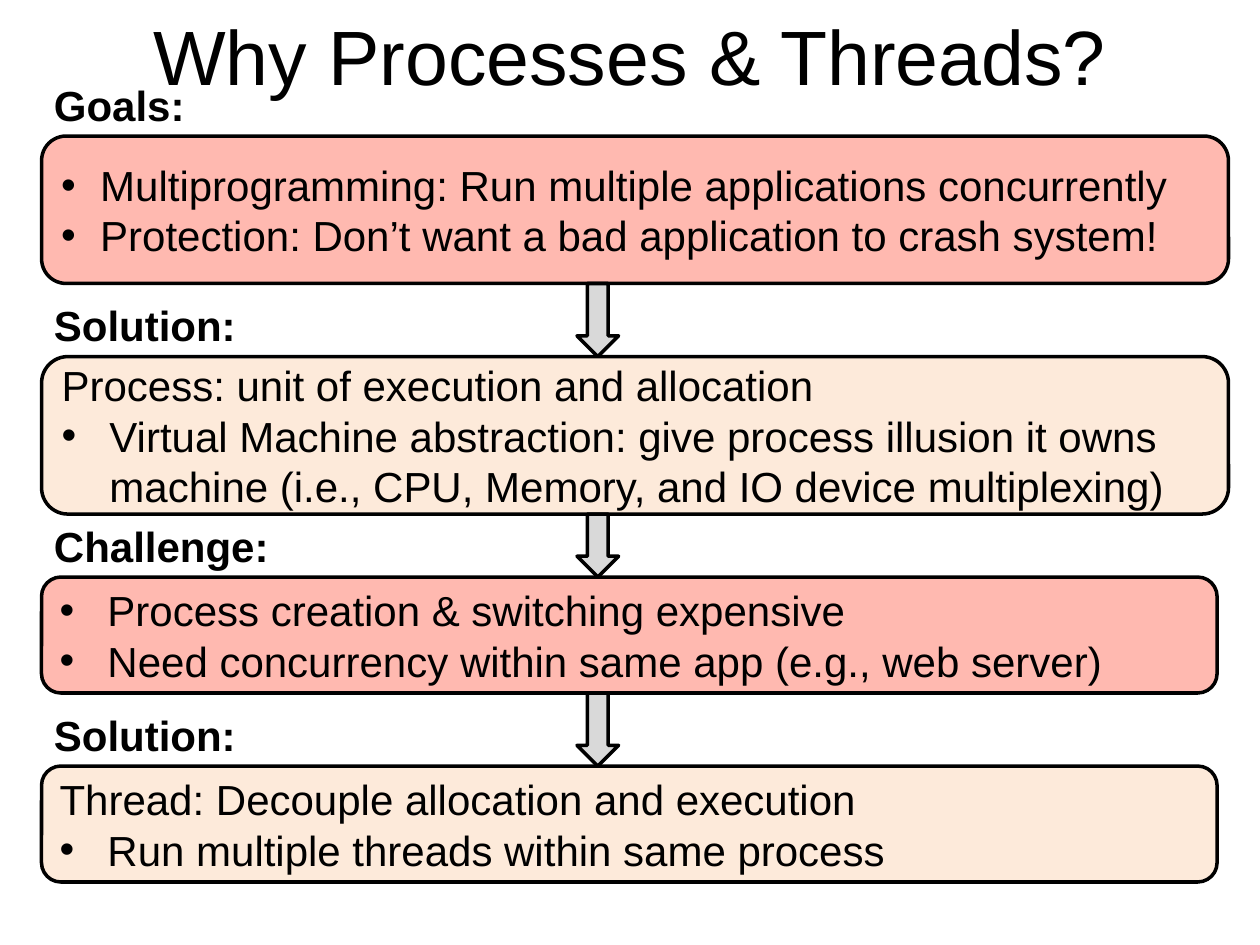
from dataclasses import dataclass

from lxml.etree import SubElement
from pptx import Presentation
from pptx.dml.color import RGBColor
from pptx.enum.shapes import MSO_SHAPE
from pptx.enum.text import MSO_ANCHOR, MSO_AUTO_SIZE, PP_ALIGN
from pptx.oxml.ns import qn
from pptx.util import Inches, Pt


@dataclass(frozen=True)
class Theme:
    font: str = "Arial"
    ink: str = "000000"
    goal: str = "FFB9B0"
    answer: str = "FDEADA"
    arrow: str = "D9D9D9"
    title: int = 44
    body: int = 24
    line: int = 2


THEME = Theme()
LEFT = 0.33
LABEL_H = 0.5
ARROW_X, ARROW_W = 4.58, 0.33

# label, label width, fill, top, width, height, bullet indent, (bulleted, text) lines
STEPS = [
    ("Goals:", 1.25, THEME.goal, 1.08, 9.42, 1.17, 0.31, [
        (True, "Multiprogramming: Run multiple applications concurrently"),
        (True, "Protection: Don’t want a bad application to crash system!")]),
    ("Solution:", 1.66, THEME.answer, 2.83, 9.42, 1.25, 0.38, [
        (False, "Process: unit of execution and allocation"),
        (True, "Virtual Machine abstraction: give process illusion it owns "
               "machine (i.e., CPU, Memory, and IO device multiplexing)")]),
    ("Challenge:", 1.92, THEME.goal, 4.58, 9.33, 0.92, 0.38, [
        (True, "Process creation & switching expensive"),
        (True, "Need concurrency within same app (e.g., web server)")]),
    ("Solution:", 1.66, THEME.answer, 6.08, 9.33, 0.92, 0.38, [
        (False, "Thread: Decouple allocation and execution"),
        (True, "Run multiple threads within same process")]),
]


def add_run(para, text, size=THEME.body, bold=False):
    run = para.add_run()
    run.text = text
    font = run.font
    font.name, font.size, font.bold = THEME.font, Pt(size), bold
    font.color.rgb = RGBColor.from_string(THEME.ink)


def set_bullet(para, indent):
    """Hang the paragraph's text behind a round bullet."""
    props = para._p.get_or_add_pPr()
    props.set("marL", str(Inches(indent)))
    props.set("indent", str(-Inches(indent)))
    SubElement(props, qn("a:buFont")).set("typeface", THEME.font)
    SubElement(props, qn("a:buChar")).set("char", "•")


def add_block(shapes, kind, fill, left, top, width, height):
    """Add an outlined shape without a shadow."""
    shape = shapes.add_shape(
        kind, Inches(left), Inches(top), Inches(width), Inches(height))
    shape.shadow.inherit = False
    shape.fill.solid()
    shape.fill.fore_color.rgb = RGBColor.from_string(fill)
    shape.line.color.rgb = RGBColor.from_string(THEME.ink)
    shape.line.width = Pt(THEME.line)
    return shape


def add_panel(shapes, fill, top, width, height, indent, lines):
    panel = add_block(shapes, MSO_SHAPE.ROUNDED_RECTANGLE, fill,
                      LEFT, top, width, height)
    frame = panel.text_frame
    frame.word_wrap = True
    frame.vertical_anchor = MSO_ANCHOR.MIDDLE
    for i, (bullet, text) in enumerate(lines):
        para = frame.add_paragraph() if i else frame.paragraphs[0]
        para.alignment = PP_ALIGN.LEFT
        if bullet:
            set_bullet(para, indent)
        add_run(para, text)


def add_label(shapes, text, top, width):
    box = shapes.add_textbox(
        Inches(LEFT), Inches(top), Inches(width), Inches(LABEL_H))
    frame = box.text_frame
    frame.word_wrap = False
    frame.auto_size = MSO_AUTO_SIZE.SHAPE_TO_FIT_TEXT
    add_run(frame.paragraphs[0], text, bold=True)


def add_title(slide, text):
    box = slide.shapes.add_textbox(
        Inches(0.5), Inches(-0.19), Inches(9), Inches(1.25))
    frame = box.text_frame
    frame.word_wrap = True
    frame.vertical_anchor = MSO_ANCHOR.MIDDLE
    frame.paragraphs[0].alignment = PP_ALIGN.CENTER
    add_run(frame.paragraphs[0], text, THEME.title)


def main():
    deck = Presentation()
    deck.slide_width, deck.slide_height = Inches(10), Inches(7.5)
    slide = deck.slides.add_slide(deck.slide_layouts[6])
    add_title(slide, "Why Processes & Threads?")

    end = None
    for label, span, fill, top, width, height, indent, lines in STEPS:
        shapes = slide.shapes.add_group_shape().shapes
        add_panel(shapes, fill, top, width, height, indent, lines)
        add_label(shapes, label, top - LABEL_H, span)
        if end is not None:
            add_block(shapes, MSO_SHAPE.DOWN_ARROW, THEME.arrow,
                      ARROW_X, end, ARROW_W, top - end)
        end = top + height

    deck.save("out.pptx")


if __name__ == "__main__":
    main()
